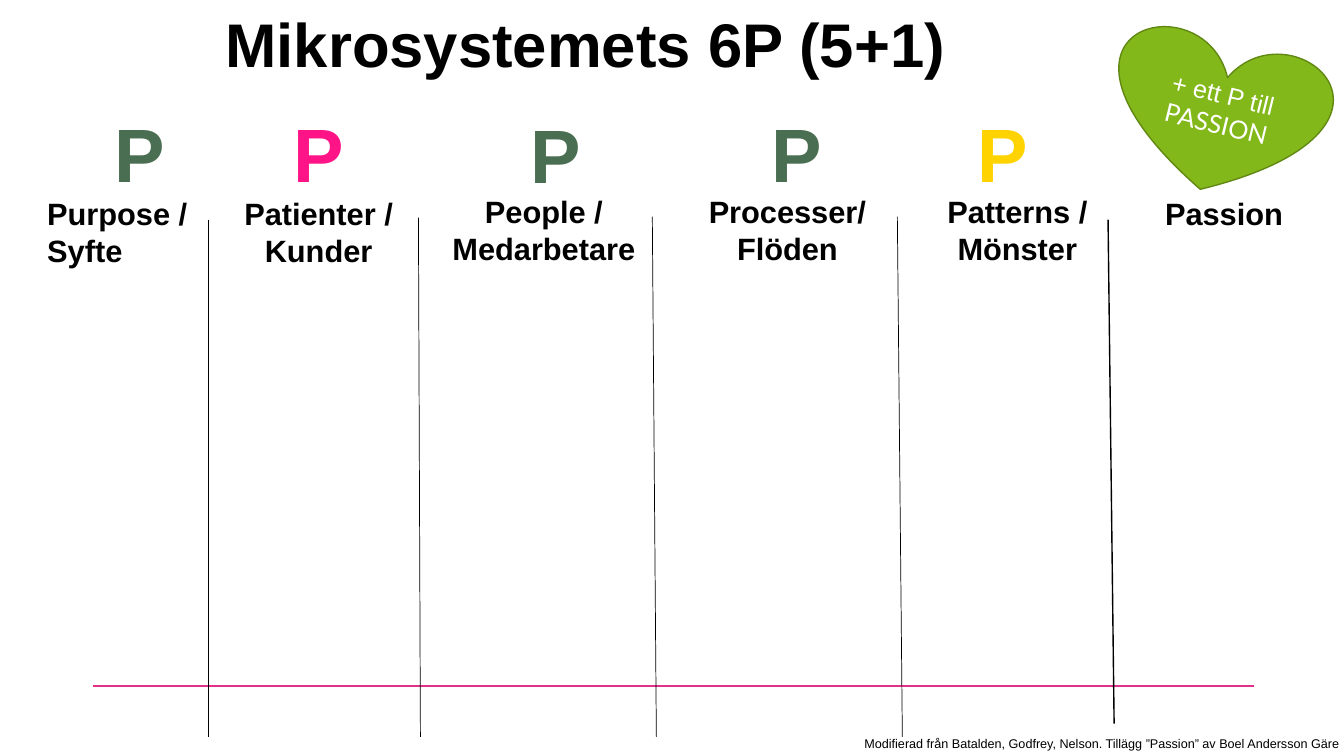
from pptx import Presentation
from pptx.dml.color import RGBColor
from pptx.enum.shapes import MSO_CONNECTOR, MSO_SHAPE
from pptx.enum.text import MSO_ANCHOR, PP_ALIGN
from pptx.oxml.ns import qn
from pptx.util import Inches, Pt
from lxml import etree

LEFT, CENTER, RIGHT = PP_ALIGN.LEFT, PP_ALIGN.CENTER, PP_ALIGN.RIGHT
TOP, MIDDLE = MSO_ANCHOR.TOP, MSO_ANCHOR.MIDDLE
BLACK = RGBColor(0x00, 0x00, 0x00)
WHITE = RGBColor(0xFF, 0xFF, 0xFF)
GREEN = RGBColor(0x4A, 0x6E, 0x51)
PINK = RGBColor(0xFF, 0x14, 0x87)
YELLOW = RGBColor(0xFF, 0xD3, 0x00)
LIME = RGBColor(0x83, 0xB8, 0x1A)
DARK_LIME = RGBColor(0x61, 0x88, 0x13)
MAGENTA = RGBColor(0xE1, 0x32, 0x88)

prs = Presentation()
prs.slide_width, prs.slide_height = Inches(13.33), Inches(7.5)
s = prs.slides.add_slide(prs.slide_layouts[6])


def add_text(text, box=None, sp=None, size=22, bold=True, color=BLACK,
             align=CENTER, anchor=TOP, wrap=True, inset=(0.1, 0.05), fonts=("Arial",)):
    """Write one paragraph per line of text, in sp or in a new text box."""
    if sp is None:
        sp = s.shapes.add_textbox(*map(Inches, box))
    tf = sp.text_frame
    tf.word_wrap = wrap
    tf.vertical_anchor = anchor
    tf.margin_left = tf.margin_right = Inches(inset[0])
    tf.margin_top = tf.margin_bottom = Inches(inset[1])
    for i, line in enumerate(text.split("\n")):
        p = tf.paragraphs[0] if i == 0 else tf.add_paragraph()
        p.alignment = align
        r = p.add_run()
        r.text = line
        r.font.name = fonts[min(i, len(fonts) - 1)]
        r.font.size = Pt(size)
        r.font.bold = bold
        r.font.color.rgb = color


def add_line(x1, y1, x2, y2, color=BLACK, width=0.5):
    line = s.shapes.add_connector(MSO_CONNECTOR.STRAIGHT, *map(Inches, (x1, y1, x2, y2)))
    line.line.color.rgb = color
    line.line.width = Pt(width)
    etree.SubElement(line._element.spPr, qn("a:effectLst"))


add_line(0.92, 6.81, 12.44, 6.81, color=MAGENTA, width=1.5)
add_text("Mikrosystemets 6P (5+1)", (1.88, 0.05, 7.86, 0.75), size=44, anchor=MIDDLE)

# Left and top of each large P, with its colour
letters = [
    (1.07, 1.02, GREEN),
    (2.84, 1.02, PINK),
    (5.19, 1.03, GREEN),
    (7.58, 1.02, GREEN),
    (9.62, 1.02, YELLOW),
]
for x, y, color in letters:
    add_text("P", (x, y, 0.55, 0.98), size=54, color=color, wrap=False, inset=(0.07, 0.04))

# Heading, its box and its alignment
columns = [
    ("Purpose / Syfte", (0.37, 1.88, 1.72, 4.63), LEFT),
    ("Patienter / Kunder", (2.32, 1.88, 1.68, 4.64), CENTER),
    ("People / Medarbetare", (4.31, 1.86, 2.17, 4.24), CENTER),
    ("Processer/\nFlöden", (6.88, 1.86, 1.86, 3.88), CENTER),
    ("Patterns /\nMönster", (9.18, 1.86, 1.82, 4.24), CENTER),
    ("Passion", (11.05, 1.88, 2.18, 4.04), CENTER),
]
for heading, box, align in columns:
    add_text(heading, box, align=align)

# Column dividers: start, end and width
dividers = [
    (2.07, 2.18, 2.07, 7.31, 0.5),
    (4.15, 2.16, 4.17, 7.31, 0.5),
    (6.47, 2.15, 6.51, 7.31, 0.5),
    (8.90, 2.15, 8.95, 7.31, 0.5),
    (10.99, 2.18, 11.05, 7.18, 1),
]
for x1, y1, x2, y2, width in dividers:
    add_line(x1, y1, x2, y2, width=width)

heart = s.shapes.add_shape(MSO_SHAPE.HEART, *map(Inches, (11.01, 0.38, 2.15, 1.52)))
heart.rotation = 13.7
heart.shadow.inherit = False
heart.fill.solid()
heart.fill.fore_color.rgb = LIME
heart.line.color.rgb = DARK_LIME
heart.line.width = Pt(1)
add_text("+ ett P till\nPASSION", sp=heart, size=18, bold=False, color=WHITE,
         anchor=MIDDLE, fonts=("Arial", "Lato"))

add_text("Modifierad från Batalden, Godfrey, Nelson. Tillägg ”Passion” av Boel Andersson Gäre",
         (8, 7.25, 5.38, 0.25), size=9, bold=False, align=RIGHT)

prs.save("out.pptx")
